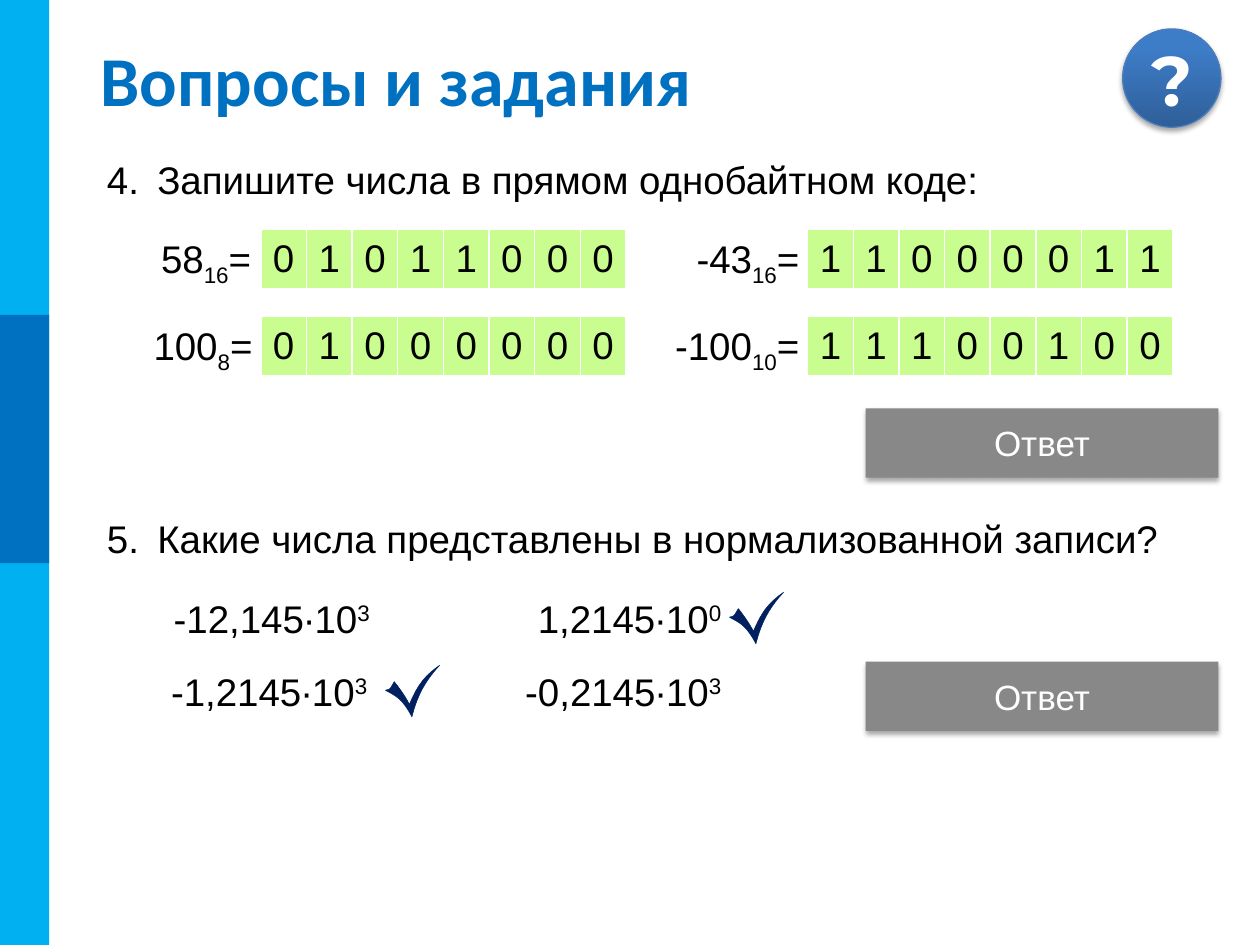
"""Build a quiz slide about signed number codes and normalized notation."""
from lxml.etree import SubElement
from pptx import Presentation
from pptx.dml.color import RGBColor
from pptx.enum.shapes import MSO_SHAPE
from pptx.enum.text import MSO_ANCHOR, MSO_AUTO_SIZE, PP_ALIGN
from pptx.oxml.ns import qn
from pptx.util import Inches, Pt

COLORS = {
    "sky": "00B0F0", "blue": "0070C0", "navy": "002060", "green": "CAFD8F",
    "gray": "888888", "black": "000000", "white": "FFFFFF",
    "badge_dark": "2F5F99", "badge_light": "3D7CC7", "badge_line": "4B7EBC",
}
CHECK_START = (0, 0.2)
CHECK_CURVES = [
    [(0.01, 0.19), (0.02, 0.2), (0.04, 0.18)],
    [(0.07, 0.13)],
    [(0.11, 0.18), (0.16, 0.25), (0.19, 0.31)],
    [(0.25, 0.17), (0.3, 0.09), (0.43, 0)],
    [(0.31, 0.13), (0.25, 0.25), (0.21, 0.41)],
    [(0.14, 0.28), (0.1, 0.25), (0, 0.2)],
]


def color(name):
    return RGBColor.from_string(COLORS[name])


def write_text(frame, *pieces, size=22, font="Arial", ink="black", bold=False,
               align=PP_ALIGN.LEFT, anchor=MSO_ANCHOR.TOP):
    """Write pieces, each a string or a (string, baseline percent) pair."""
    frame.vertical_anchor = anchor
    paragraph = frame.paragraphs[0]
    paragraph.alignment = align
    for piece in pieces:
        text, baseline = (piece, 0) if isinstance(piece, str) else piece
        run = paragraph.add_run()
        run.text = text
        run.font.size, run.font.name, run.font.bold = Pt(size), font, bold
        run.font.color.rgb = color(ink)
        if baseline:
            run._r.get_or_add_rPr().set("baseline", str(baseline * 1000))
    return paragraph


def curve_points(start, curves, steps=10):
    """Return the points along a chain of straight and cubic pieces."""
    points = []
    for curve in curves:
        if len(curve) == 1:
            points += curve
        else:
            for step in range(1, steps + 1):
                t = step / steps
                weights = ((1 - t) ** 3, 3 * t * (1 - t) ** 2, 3 * t * t * (1 - t), t ** 3)
                controls = [start, *curve]
                points.append(tuple(sum(w * p[axis] for w, p in zip(weights, controls))
                                    for axis in (0, 1)))
        start = curve[-1]
    return points


class QuizSlide:
    """Hold the current slide and draw its elements in one style."""

    def __init__(self, slide):
        self.slide = slide
        self.shapes = slide.shapes

    def title(self, text):
        title = self.shapes.title
        title.left, title.top = Inches(0.7), Inches(0.3)
        title.width, title.height = Inches(9.02), Inches(0.64)
        write_text(title.text_frame, text, size=40, font="Calibri", ink="blue",
                   bold=True, anchor=MSO_ANCHOR.MIDDLE)

    def shape(self, left, top, width, height, fill, kind=MSO_SHAPE.RECTANGLE):
        shape = self.shapes.add_shape(kind, Inches(left), Inches(top),
                                      Inches(width), Inches(height))
        shape.shadow.inherit = False
        shape.fill.solid()
        shape.fill.fore_color.rgb = color(fill)
        shape.line.fill.background()
        return shape

    def add_shadow(self, shape):
        effects = shape._element.spPr.find(qn("a:effectLst"))
        shadow = SubElement(effects, qn("a:outerShdw"), blurRad=str(Pt(3.1)),
                            dist=str(Pt(1.8)), dir="5400000", rotWithShape="0")
        tint = SubElement(shadow, qn("a:srgbClr"), val=COLORS["black"])
        SubElement(tint, qn("a:alpha"), val="35000")

    def badge(self, text):
        badge = self.shape(8.91, 0.23, 0.78, 0.78, "badge_light", MSO_SHAPE.OVAL)
        badge.fill.gradient()
        badge.fill.gradient_angle = 90
        stops = zip(badge.fill.gradient_stops, (0, 0.8), ("badge_dark", "badge_light"))
        for stop, position, name in stops:
            stop.position = position
            stop.color.rgb = color(name)
        badge.line.color.rgb = color("badge_line")
        badge.line.width = Pt(0.75)
        self.add_shadow(badge)
        write_text(badge.text_frame, text, size=40, font="Montserrat", ink="white",
                   bold=True, align=PP_ALIGN.CENTER, anchor=MSO_ANCHOR.MIDDLE)

    def button(self, top, text):
        button = self.shape(6.87, top, 2.8, 0.55, "gray")
        self.add_shadow(button)
        write_text(button.text_frame, text, size=20, ink="white",
                   align=PP_ALIGN.CENTER, anchor=MSO_ANCHOR.MIDDLE)

    def label(self, left, top, width, *pieces, wrap=False):
        box = self.shapes.add_textbox(Inches(left), Inches(top), Inches(width), Inches(0.47))
        box.text_frame.word_wrap = wrap
        box.text_frame.auto_size = MSO_AUTO_SIZE.SHAPE_TO_FIT_TEXT
        return write_text(box.text_frame, *pieces)

    def question(self, number, top, text):
        paragraph = self.label(0.75, top, 8.98, text, wrap=True)
        properties = paragraph._p.get_or_add_pPr()
        properties.set("marL", str(Inches(0.4)))
        properties.set("indent", str(Inches(-0.4)))
        SubElement(properties, qn("a:buFont"), typeface="+mj-lt")
        SubElement(properties, qn("a:buAutoNum"), type="arabicPeriod", startAt=str(number))

    def byte(self, left, top, bits):
        table = self.shapes.add_table(1, len(bits), Inches(left), Inches(top),
                                      Inches(2.9), Inches(0.47)).table
        table.first_row = table.horz_banding = False
        for cell, bit in zip(table.iter_cells(), bits):
            cell.fill.solid()
            cell.fill.fore_color.rgb = color("green")
            cell.margin_left = cell.margin_right = 0
            cell.vertical_anchor = MSO_ANCHOR.MIDDLE
            write_text(cell.text_frame, bit, align=PP_ALIGN.CENTER,
                       anchor=MSO_ANCHOR.MIDDLE)

    def check(self, left, top):
        points = [(Inches(left + x), Inches(top + y))
                  for x, y in curve_points(CHECK_START, CHECK_CURVES)]
        builder = self.shapes.build_freeform(Inches(left + CHECK_START[0]),
                                             Inches(top + CHECK_START[1]))
        builder.add_line_segments(points, close=True)
        check = builder.convert_to_shape()
        check.shadow.inherit = False
        check.fill.solid()
        check.fill.fore_color.rgb = color("navy")
        check.line.color.rgb = color("navy")
        check.line.width = Pt(0.25)


def main():
    presentation = Presentation()
    presentation.slide_width, presentation.slide_height = Inches(10), Inches(7.5)
    quiz = QuizSlide(presentation.slides.add_slide(presentation.slide_layouts[5]))

    quiz.shape(0, 0, 0.39, 7.5, "sky")
    quiz.shape(0, 2.5, 0.39, 1.97, "blue")
    quiz.badge("?")
    quiz.title("Вопросы и задания")

    quiz.question(4, 1.19, "Запишите числа в прямом однобайтном коде:")
    codes = [
        (1.18, 1.82, 0.95, "58", "16", 2.07, "01011000"),
        (5.43, 1.82, 1.06, "-43", "16", 6.41, "11000011"),
        (1.12, 2.51, 1.01, "100", "8", 2.07, "01000000"),
        (5.26, 2.51, 1.23, "-100", "10", 6.41, "11100100"),
    ]
    for left, top, width, number, base, byte_left, bits in codes:
        quiz.label(left, top, width, number, (base, -25), "=")
        quiz.byte(byte_left, top, bits)

    quiz.question(5, 4.04, "Какие числа представлены в нормализованной записи?")
    numbers = [
        (1.28, 4.67, 1.85, "-12,145∙10", "3"),
        (4.17, 4.67, 1.69, "1,2145∙10", "0"),
        (1.26, 5.25, 1.79, "-1,2145∙10", "3"),
        (4.07, 5.25, 1.79, "-0,2145∙10", "3"),
    ]
    for left, top, width, mantissa, power in numbers:
        quiz.label(left, top, width, mantissa, (power, 30))
    for left, top in ((3.06, 5.28), (5.79, 4.7)):
        quiz.check(left, top)
    for top in (3.24, 5.25):
        quiz.button(top, "Ответ")

    presentation.save("out.pptx")


if __name__ == "__main__":
    main()
